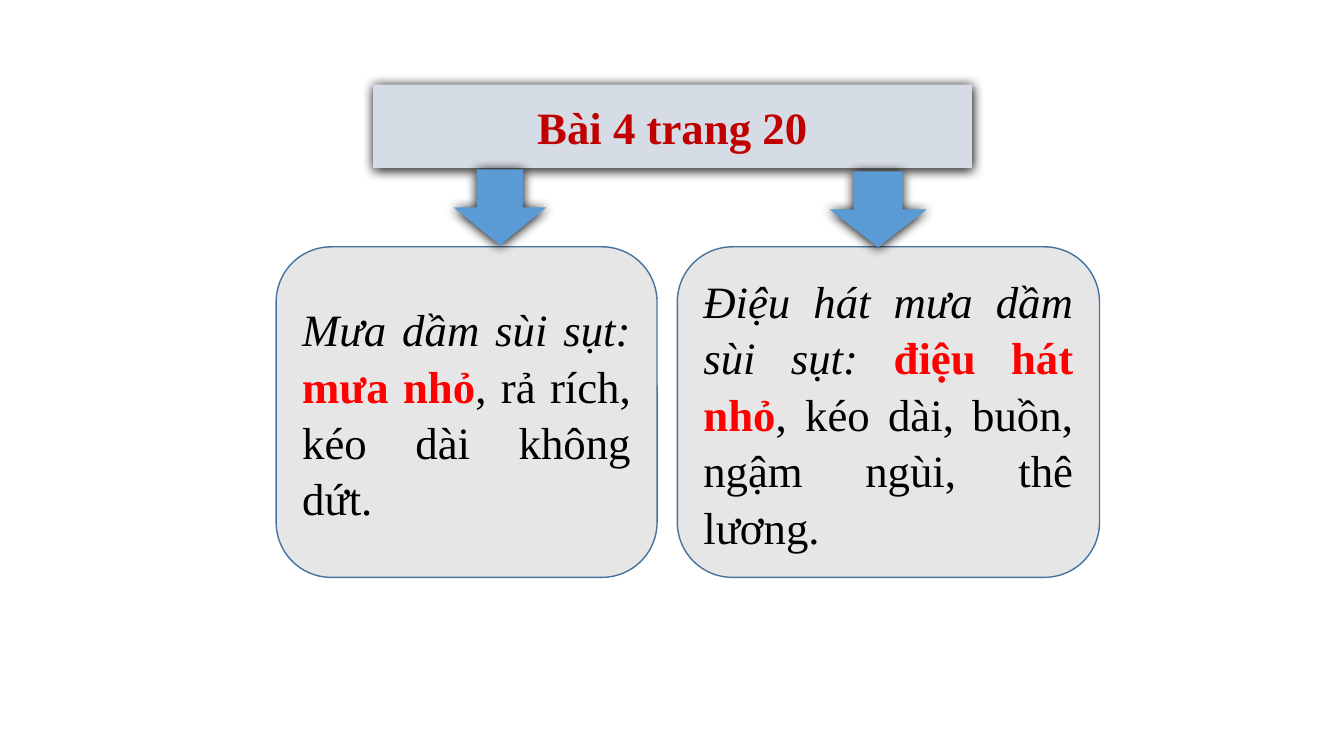
from dataclasses import dataclass

from pptx import Presentation
from pptx.dml.color import RGBColor as RGB
from pptx.enum.shapes import MSO_SHAPE as Kind
from pptx.enum.text import MSO_ANCHOR as Anchor, PP_ALIGN as Align
from pptx.oxml import parse_xml
from pptx.oxml.ns import nsdecls
from pptx.util import Cm, Pt


@dataclass(frozen=True)
class Theme:
    font: str = "Times New Roman"
    size: int = 32
    edge: int = 1
    banner: str = "D6DCE5"
    head: str = "C00000"
    card: str = "E7E6E6"
    rim: str = "43739E"
    ink: str = "000000"
    key: str = "FF0000"
    arrow: str = "5B9BD5"


THEME = Theme()


def paint(shape, fill, line=None):
    shape.shadow.inherit = False
    shape.fill.solid()
    shape.fill.fore_color.rgb = RGB.from_string(fill)
    if line:
        shape.line.color.rgb = RGB.from_string(line)
        shape.line.width = Pt(THEME.edge)
    else:
        shape.line.fill.background()


def glow(shape):
    """Put a soft dark shadow just below the painted shape."""
    effects = shape._element.spPr.find("{*}effectLst")
    effects.append(parse_xml(
        f'<a:outerShdw {nsdecls("a")} blurRad="{Pt(8.5)}" dist="{Pt(1)}" '
        'dir="5400000" algn="ctr" rotWithShape="0">'
        '<a:srgbClr val="000000"/></a:outerShdw>'))


def style(run, color, bold=False, italic=False):
    font = run.font
    font.name, font.size = THEME.font, Pt(THEME.size)
    font.bold, font.italic = bold, italic
    font.color.rgb = RGB.from_string(color)


def add_banner(slide, text, left, top, width, height):
    """Turn the title placeholder into a hexagon."""
    title = slide.shapes.title
    title.left, title.top = Cm(left), Cm(top)
    title.width, title.height = Cm(width), Cm(height)
    title._element.spPr.find("{*}xfrm").addnext(parse_xml(
        f'<a:prstGeom {nsdecls("a")} prst="hexagon"><a:avLst/></a:prstGeom>'))
    paint(title, THEME.banner)
    glow(title)
    frame = title.text_frame
    frame.text = text
    frame.vertical_anchor = Anchor.MIDDLE
    para = frame.paragraphs[0]
    para.alignment = Align.CENTER
    style(para.runs[0], THEME.head, bold=True)


def add_card(slide, parts, left, top, width, height):
    """Draw a rounded box holding a phrase, its key words and the rest."""
    card = slide.shapes.add_shape(
        Kind.ROUNDED_RECTANGLE, Cm(left), Cm(top), Cm(width), Cm(height))
    paint(card, THEME.card, THEME.rim)
    frame = card.text_frame
    frame.word_wrap = True
    frame.vertical_anchor = Anchor.MIDDLE
    para = frame.paragraphs[0]
    para.alignment = Align.JUSTIFY
    para.line_spacing = 1.05
    looks = ((THEME.ink, False, True), (THEME.key, True, False),
             (THEME.ink, False, False))
    for text, look in zip(parts, looks):
        run = para.add_run()
        run.text = text
        style(run, *look)


def add_arrow(slide, left, top, width, height):
    arrow = slide.shapes.add_shape(
        Kind.DOWN_ARROW, Cm(left), Cm(top), Cm(width), Cm(height))
    paint(arrow, THEME.arrow)
    glow(arrow)


def main():
    deck = Presentation()
    deck.slide_width, deck.slide_height = Cm(33.87), Cm(19.05)
    slide = deck.slides.add_slide(deck.slide_layouts.get_by_name("Title Only"))

    add_banner(slide, "Bài 4 trang 20", 9.4, 2.13, 15.09, 2.11)

    rain = ("Mưa dầm sùi sụt: ", "mưa nhỏ", ", rả rích, kéo dài không dứt.")
    song = ("Điệu hát mưa dầm sùi sụt: ", "điệu hát nhỏ",
            ", kéo dài, buồn, ngậm ngùi, thê lương.")
    for parts, left, width in ((rain, 6.96, 9.6), (song, 17.07, 10.64)):
        add_card(slide, parts, left, 6.22, width, 8.33)

    for left, top, width in ((11.43, 4.27, 2.34), (20.9, 4.32, 2.46)):
        add_arrow(slide, left, top, width, 1.91)

    deck.save("out.pptx")


if __name__ == "__main__":
    main()
